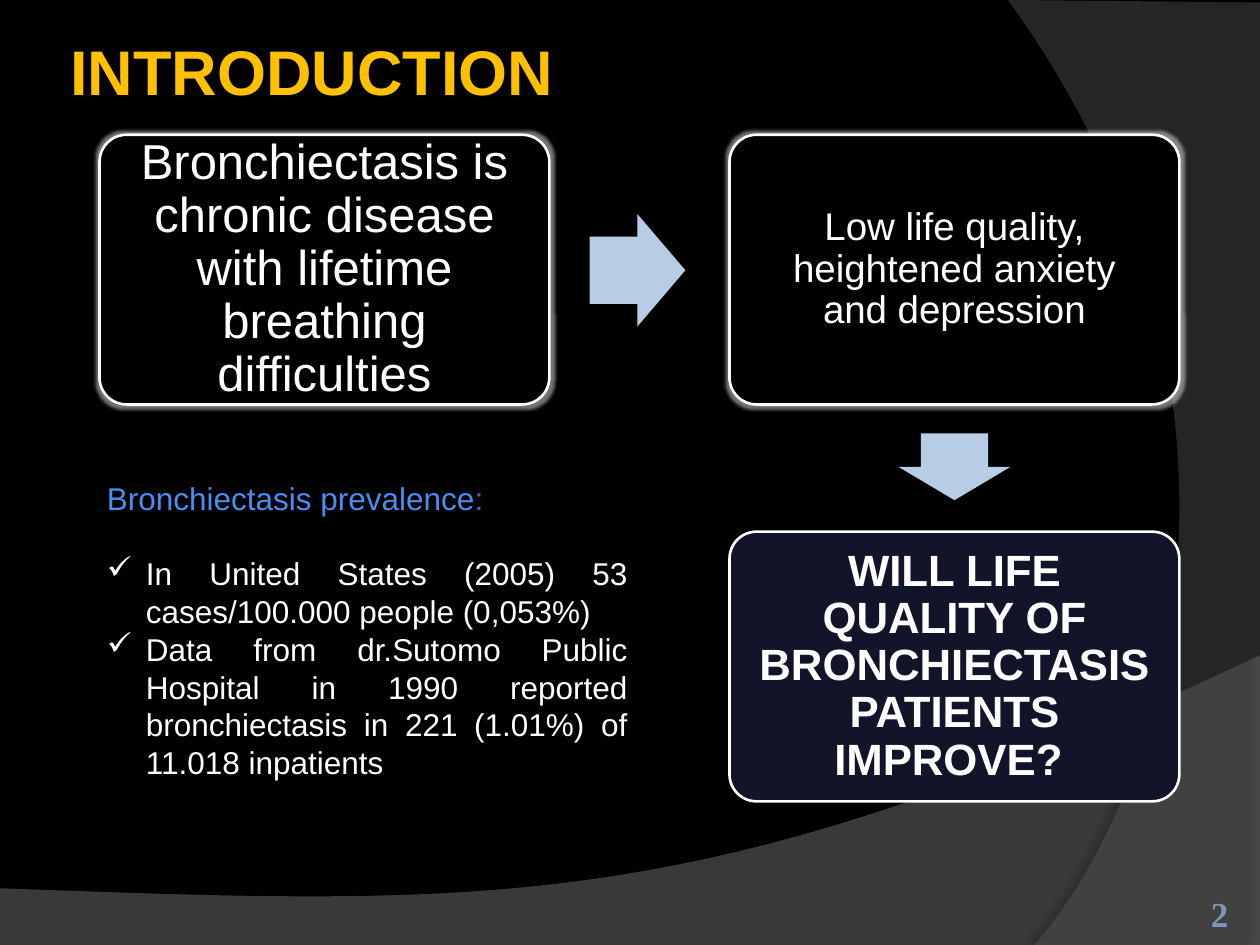
import pptx
import pptx.dml.color
import pptx.enum.shapes
import pptx.enum.text
import pptx.oxml
import pptx.oxml.ns
import pptx.util

Inches = pptx.util.Inches
Pt = pptx.util.Pt
RGBColor = pptx.dml.color.RGBColor
Align = pptx.enum.text.PP_ALIGN
Anchor = pptx.enum.text.MSO_ANCHOR
Shape = pptx.enum.shapes.MSO_SHAPE

BLACK = RGBColor(0x00, 0x00, 0x00)
WHITE = RGBColor(0xFF, 0xFF, 0xFF)
NAVY = RGBColor(0x12, 0x14, 0x29)
AMBER = RGBColor(0xFF, 0xC0, 0x00)
PALE_BLUE = RGBColor(0xB7, 0xCC, 0xE5)
HEADING_BLUE = RGBColor(0x4A, 0x8E, 0xF2)
COLON_BLUE = RGBColor(0x5C, 0x64, 0xB7)
NUMBER_BLUE = RGBColor(0x7F, 0x96, 0xB8)
LOWER_GREY = RGBColor(0x7F, 0x7F, 0x7F)
RIGHT_GREY = RGBColor(0x5E, 0x5E, 0x5E)

LEFT_COLUMN, RIGHT_COLUMN = 0.79, 5.79
TOP_ROW, BOTTOM_ROW = 1.07, 4.22
CARD_WIDTH, CARD_HEIGHT = 3.57, 2.14
LINE_PITCH = Pt(21.6)


def add_xml(parent, tag, content="", **attributes):
    listed = "".join(f' {name}="{value}"' for name, value in attributes.items())
    parent.append(pptx.oxml.parse_xml(
        f'<a:{tag} {pptx.oxml.ns.nsdecls("a")}{listed}>{content}</a:{tag}>'))


def color_xml(color, opacity):
    return f'<a:srgbClr val="{color}"><a:alpha val="{opacity * 1000}"/></a:srgbClr>'


def add_effect(shape, tag, color, opacity, **attributes):
    effects = shape._element.spPr.find(pptx.oxml.ns.qn("a:effectLst"))
    add_xml(effects, tag, color_xml(color, opacity), **attributes)


def add_run(paragraph, text, size, color, bold=False, font="Arial"):
    run = paragraph.add_run()
    run.text = text
    run.font.name = font
    run.font.size = Pt(size)
    run.font.bold = bold
    run.font.color.rgb = color


def set_frame(frame, inset, anchor):
    frame.word_wrap = True
    frame.auto_size = pptx.enum.text.MSO_AUTO_SIZE.NONE
    frame.vertical_anchor = anchor
    frame.margin_left = frame.margin_right = Inches(inset)
    frame.margin_top = frame.margin_bottom = Inches(inset)


def bezier(start, control_1, control_2, end, steps=60):
    """Return the points of a cubic curve after its start."""
    points = []
    for step in range(1, steps + 1):
        t = step / steps
        weights = ((1 - t) ** 3, 3 * t * (1 - t) ** 2, 3 * t * t * (1 - t), t ** 3)
        points.append(tuple(
            sum(weight * value for weight, value in zip(weights, axis))
            for axis in zip(start, control_1, control_2, end)))
    return points


def add_swoosh(slide, points, color, opacity, shadow_opacity, direction):
    builder = slide.shapes.build_freeform(
        Inches(points[0][0]), Inches(points[0][1]), scale=1.0)
    builder.add_line_segments(
        [(Inches(x), Inches(y)) for x, y in points[1:]], close=True)
    swoosh = builder.convert_to_shape()
    swoosh.fill.solid()
    swoosh.fill.fore_color.rgb = color
    add_xml(swoosh.fill.fore_color._xFill[0], "alpha", val=opacity * 1000)
    swoosh.line.fill.background()
    swoosh.shadow.inherit = False
    add_effect(swoosh, "outerShdw", BLACK, shadow_opacity,
               blurRad=Pt(4), dist=Pt(4), dir=direction * 60000)


def add_background(slide):
    slide.background.fill.solid()
    slide.background.fill.fore_color.rgb = BLACK
    lower = [(0, 7.05), (0, 7.51), (10, 7.51), (10, 5.2)]
    lower += bezier(lower[-1], (5.59, 7.29), (3.91, 7.19), (0, 7.05))
    add_swoosh(slide, lower, LOWER_GREY, 45, 35, 270)
    right = [(10, 0.02), (10, 7.5), (8.21, 7.5)]
    right += bezier(right[-1], (9.35, 6.19), (10.18, 3), (8, 0))
    add_swoosh(slide, right, RIGHT_GREY, 40, 45, 180)


def add_title(slide, text):
    title = slide.shapes.title
    title.left, title.top = Inches(0.51), Inches(0.13)
    title.width, title.height = Inches(8.17), Inches(0.85)
    set_frame(title.text_frame, 0.05, Anchor.MIDDLE)
    paragraph = title.text_frame.paragraphs[0]
    paragraph.alignment = Align.LEFT
    add_run(paragraph, text, 36, AMBER, bold=True)


def add_card(slide, left, top, text, size, inset, fill=BLACK, bold=False, glow=True):
    card = slide.shapes.add_shape(
        Shape.ROUNDED_RECTANGLE, Inches(left), Inches(top),
        Inches(CARD_WIDTH), Inches(CARD_HEIGHT))
    card.adjustments[0] = 0.1
    card.fill.solid()
    card.fill.fore_color.rgb = fill
    card.line.color.rgb = WHITE
    card.line.width = Pt(1.5)
    card.shadow.inherit = False
    if glow:
        add_effect(card, "glow", WHITE, 45, rad=Pt(4))
    set_frame(card.text_frame, inset, Anchor.MIDDLE)
    paragraph = card.text_frame.paragraphs[0]
    paragraph.alignment = Align.CENTER
    paragraph.line_spacing = 0.9
    add_run(paragraph, text, size, WHITE, bold)


def add_arrow(slide, left, top, width, height, rotation=0):
    arrow = slide.shapes.add_shape(
        Shape.RIGHT_ARROW, Inches(left), Inches(top), Inches(width), Inches(height))
    arrow.adjustments[0] = 0.6
    arrow.adjustments[1] = 0.5
    arrow.rotation = rotation
    arrow.fill.solid()
    arrow.fill.fore_color.rgb = PALE_BLUE
    arrow.line.fill.background()
    arrow.shadow.inherit = False


def add_prevalence(slide, findings):
    box = slide.shapes.add_textbox(
        Inches(0.75), Inches(3.75), Inches(4.33), Inches(2.83))
    frame = box.text_frame
    set_frame(frame, 0.1, Anchor.TOP)
    frame.margin_top = frame.margin_bottom = Inches(0.05)
    heading = frame.paragraphs[0]
    heading.line_spacing = LINE_PITCH
    heading.space_after = LINE_PITCH
    add_run(heading, "Bronchiectasis prevalence", 18, HEADING_BLUE)
    add_run(heading, ":", 18, COLON_BLUE)
    for finding in findings:
        paragraph = frame.add_paragraph()
        paragraph.alignment = Align.JUSTIFY
        paragraph.line_spacing = LINE_PITCH
        properties = paragraph._p.get_or_add_pPr()
        properties.set("marL", str(Inches(0.31)))
        properties.set("indent", str(-Inches(0.31)))
        add_xml(properties, "buClr", color_xml(WHITE, 100))
        add_xml(properties, "buChar", char="✓")
        add_run(paragraph, finding, 18, WHITE)


def add_slide_number(slide, number):
    box = slide.shapes.add_textbox(
        Inches(8.92), Inches(7.02), Inches(0.83), Inches(0.4))
    set_frame(box.text_frame, 0, Anchor.BOTTOM)
    paragraph = box.text_frame.paragraphs[0]
    paragraph.alignment = Align.RIGHT
    add_run(paragraph, number, 20, NUMBER_BLUE, bold=True, font="Times New Roman")


def main():
    presentation = pptx.Presentation()
    presentation.slide_width, presentation.slide_height = Inches(10), Inches(7.5)
    slide = presentation.slides.add_slide(presentation.slide_layouts[5])
    add_background(slide)
    add_title(slide, "INTRODUCTION")
    add_slide_number(slide, "2")
    add_card(slide, LEFT_COLUMN, TOP_ROW,
             "Bronchiectasis is chronic disease with lifetime breathing difficulties",
             28, 0.18)
    add_arrow(slide, 4.68, 1.7, 0.76, 0.89)
    add_card(slide, RIGHT_COLUMN, TOP_ROW,
             "Low life quality, heightened anxiety and depression", 22, 0.15)
    add_arrow(slide, 7.31, 3.26, 0.53, 0.89, rotation=90)
    add_card(slide, RIGHT_COLUMN, BOTTOM_ROW,
             "WILL LIFE QUALITY OF BRONCHIECTASIS PATIENTS IMPROVE? ",
             25, 0.16, fill=NAVY, bold=True, glow=False)
    add_prevalence(slide, [
        "In United States (2005) 53 cases/100.000 people (0,053%)",
        "Data from dr.Sutomo Public Hospital in 1990 reported bronchiectasis"
        " in 221 (1.01%) of 11.018 inpatients",
    ])
    presentation.save("out.pptx")


if __name__ == "__main__":
    main()
